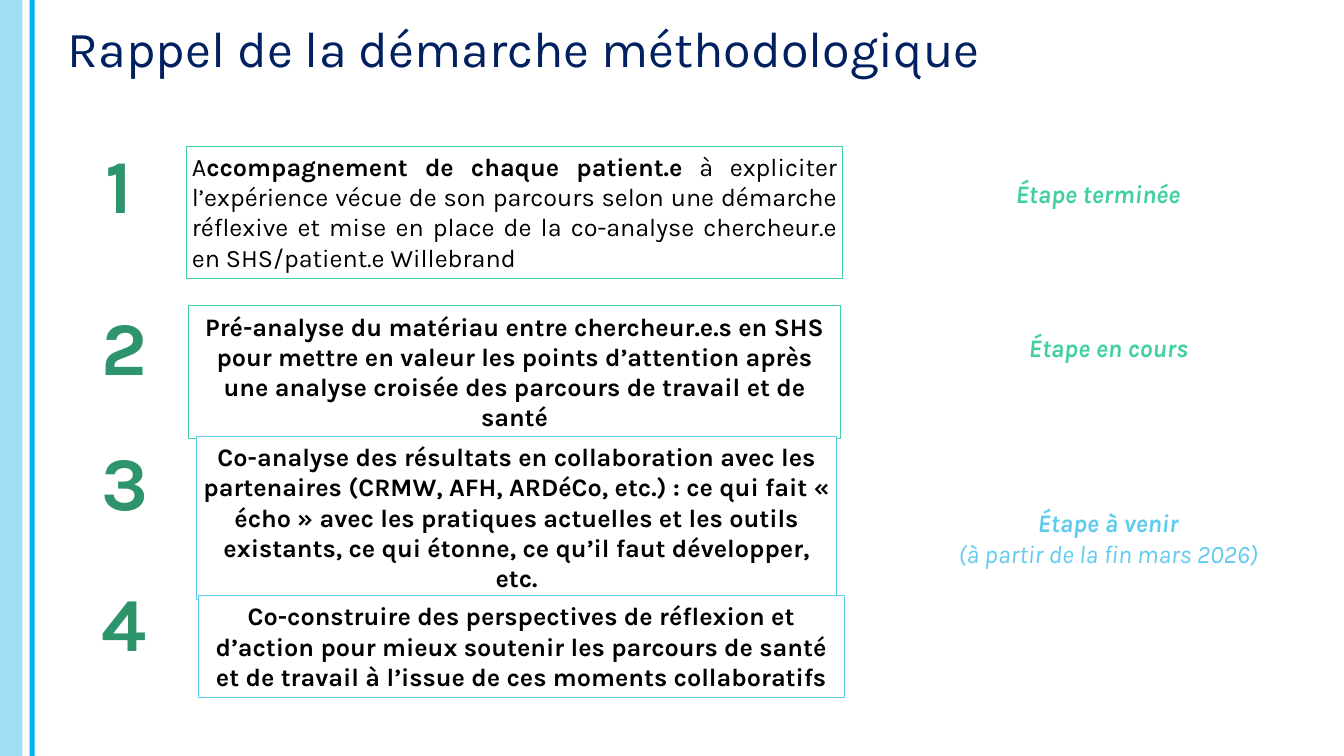
from pptx import Presentation
from pptx.dml.color import RGBColor
from pptx.enum.shapes import MSO_SHAPE as SHAPE
from pptx.enum.text import MSO_ANCHOR as ANCHOR, MSO_AUTO_SIZE as FIT, PP_ALIGN as ALIGN
from pptx.util import Pt

FONT = "Karla"
NAVY, BLACK, WHITE = "002060", "000000", "FFFFFF"
GREEN, MINT, SKY = "2E946B", "42D0A2", "5FCBEF"

STEPS = [
    ((267, 209, 936, 189), (132.5, 190), MINT, ALIGN.JUSTIFY, [
        ("A", False),
        ("ccompagnement de chaque patient.e", True),
        (" à expliciter l’expérience vécue de son parcours selon une démarche "
         "réflexive et mise en place de la co-analyse chercheur.e en "
         "SHS/patient.e Willebrand", False)]),
    ((269, 437, 932, 189), (137.5, 421), MINT, ALIGN.CENTER, [
        ("Pré-analyse du matériau entre chercheur.e.s en SHS pour mettre en "
         "valeur les points d’attention après une analyse croisée des parcours "
         "de travail et de santé", True)]),
    ((281, 623.5, 914, 232.5), (137.5, 614), SKY, ALIGN.CENTER, [
        ("Co-analyse des résultats en collaboration avec les partenaires "
         "(CRMW, AFH, ARDéCo, etc.) : ce qui fait « écho » avec les pratiques "
         "actuelles et les outils existants, ce qui étonne, ce qu’il faut "
         "développer, etc.", True)]),
    ((283, 851, 923, 145.5), (137.5, 816), SKY, ALIGN.CENTER, [
        ("Co-construire des perspectives de réflexion et d’action pour mieux "
         "soutenir les parcours de santé et de travail à l’issue de ces "
         "moments collaboratifs", True)]),
]

STATUSES = [
    ((1280, 248, 577, 58), MINT, True, [("Étape terminée", True)]),
    ((1258, 467, 651, 58), MINT, True, [("Étape en cours", True)]),
    ((1330.5, 718, 505, 101.5), SKY, False,
     [("Étape à venir", True), ("(à partir de la fin mars 2026)", False)]),
]


def rgb(color):
    """Turn a hex string into a colour."""
    return RGBColor.from_string(color)


def add_run(p, text, size, color, bold=False, italic=False):
    """Append one formatted run to a paragraph."""
    r = p.add_run()
    r.text = text
    r.font.name, r.font.size = FONT, Pt(size)
    r.font.bold, r.font.italic = bold, italic
    r.font.color.rgb = rgb(color)


def set_frame(tf, inset, wrap=True):
    """Set equal insets, wrapping and top anchoring."""
    tf.margin_left = tf.margin_right = tf.margin_top = tf.margin_bottom = Pt(inset)
    tf.word_wrap = wrap
    tf.auto_size = FIT.NONE
    tf.vertical_anchor = ANCHOR.TOP


def add_rect(s, box, fill, line=None):
    """Draw a flat rectangle with an optional outline."""
    sp = s.shapes.add_shape(SHAPE.RECTANGLE, *map(Pt, box))
    sp.shadow.inherit = False
    sp.fill.solid()
    sp.fill.fore_color.rgb = rgb(fill)
    if line:
        sp.line.color.rgb = rgb(line)
        sp.line.width = Pt(1.5)
    else:
        sp.line.fill.background()
    return sp


def add_title(s, box, text):
    """Place and format the title placeholder."""
    sp = s.shapes.title
    sp.left, sp.top, sp.width, sp.height = map(Pt, box)
    set_frame(sp.text_frame, 3.6)
    p = sp.text_frame.paragraphs[0]
    p.alignment = ALIGN.LEFT
    add_run(p, text, 72, NAVY)


def add_step(s, box, line, align, runs):
    """Draw the outlined description of a step."""
    tf = add_rect(s, box, WHITE, line).text_frame
    set_frame(tf, 7.2)
    p = tf.paragraphs[0]
    p.alignment = align
    for text, bold in runs:
        add_run(p, text, 36, BLACK, bold)


def add_number(s, box, number):
    """Write the large number of a step."""
    tf = s.shapes.add_textbox(*map(Pt, box)).text_frame
    set_frame(tf, 7.2)
    p = tf.paragraphs[0]
    p.alignment = ALIGN.CENTER
    add_run(p, str(number), 108, GREEN, True)


def add_status(s, box, color, wrap, lines):
    """Write the progress note beside the steps."""
    tf = s.shapes.add_textbox(*map(Pt, box)).text_frame
    set_frame(tf, 7.2, wrap)
    for i, (text, bold) in enumerate(lines):
        p = tf.add_paragraph() if i else tf.paragraphs[0]
        p.alignment = ALIGN.CENTER
        add_run(p, text, 36, color, bold, True)


def add_side_bands(s, height):
    """Draw the two vertical bands on the left edge."""
    add_rect(s, (0, 0, 32, height), "9EDFF5")
    add_rect(s, (42.5, 0, 7, height), "00B0F0")


def main():
    """Build and save the slide."""
    prs = Presentation()
    prs.slide_width, prs.slide_height = Pt(1920), Pt(1080)
    s = prs.slides.add_slide(prs.slide_layouts[5])
    add_title(s, (93.5, 21, 1354, 208), "Rappel de la démarche méthodologique")
    for number, (box, corner, line, align, runs) in enumerate(STEPS, 1):
        add_step(s, box, line, align, runs)
        add_number(s, (*corner, 75.5, 145.5), number)
    add_side_bands(s, 1080)
    for status in STATUSES:
        add_status(s, *status)
    prs.save("out.pptx")


if __name__ == "__main__":
    main()
